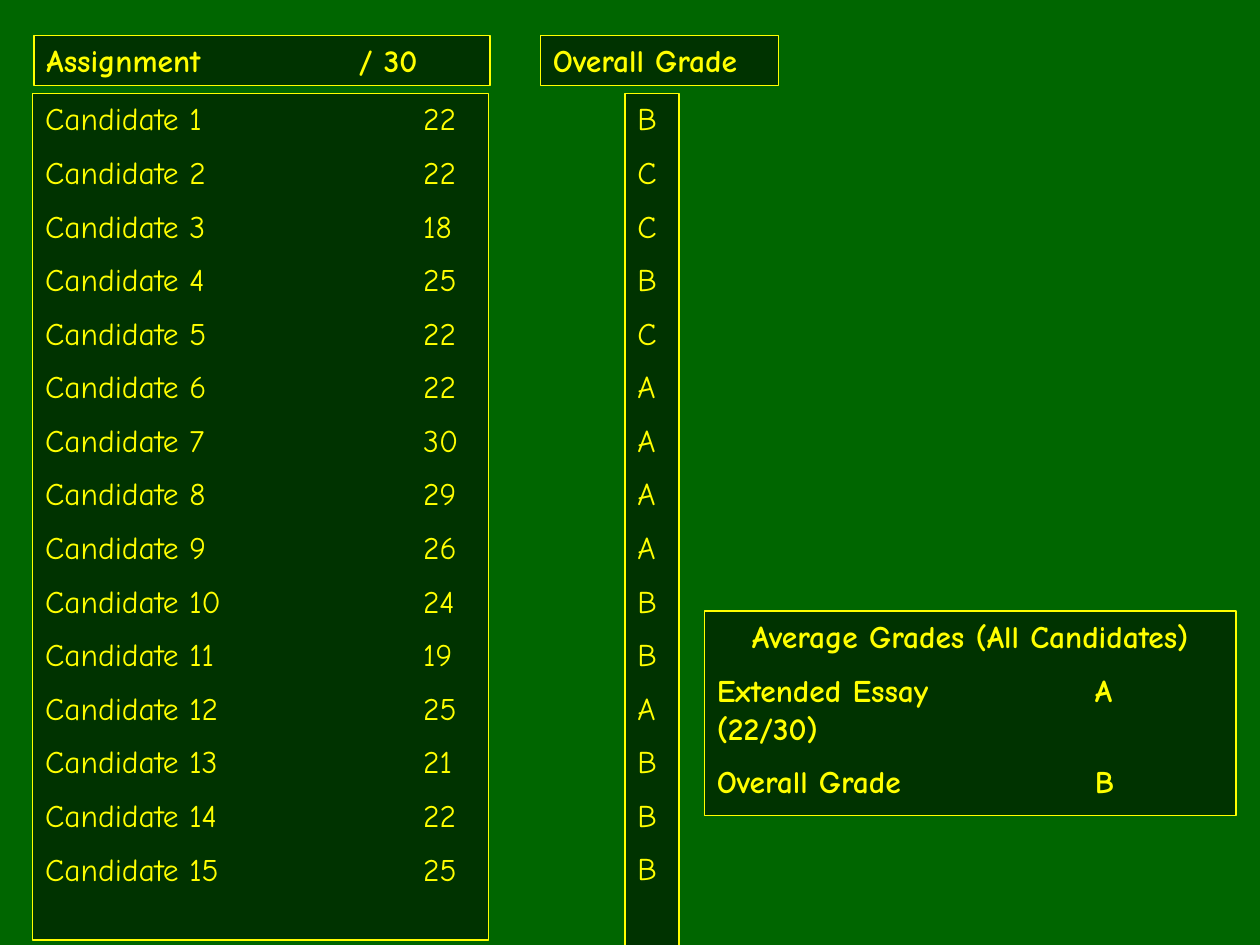
from dataclasses import dataclass

from lxml.etree import SubElement
from pptx import Presentation
from pptx.dml.color import RGBColor
from pptx.enum.text import MSO_ANCHOR, PP_ALIGN
from pptx.oxml.ns import qn
from pptx.util import Inches, Pt


@dataclass(frozen=True)
class Theme:
    """Colours, type and line sizes of the deck."""
    background: RGBColor = RGBColor(0x00, 0x66, 0x00)
    panel: RGBColor = RGBColor(0x00, 0x33, 0x00)
    accent: RGBColor = RGBColor(0xFF, 0xFF, 0x00)
    font: str = "Comic Neue"
    size: Pt = Pt(18)
    gap: Pt = Pt(9)
    border: Pt = Pt(0.75)


THEME = Theme()
VALUE_STOP = Inches(3)
HEADING_STOP = Inches(2.48)
SCORES = [22, 22, 18, 25, 22, 22, 30, 29, 26, 24, 19, 25, 21, 22, 25]
GRADES = "BCCBCAAAABBABBB"


def add_tab_stop(para, position):
    """Give a paragraph one left-aligned tab stop."""
    stops = SubElement(para._p.get_or_add_pPr(), qn("a:tabLst"))
    SubElement(stops, qn("a:tab"), pos=str(int(position)), algn="l")


def add_panel(page, box, lines, bold=False, stop=None):
    """Place a bordered panel of text lines in the given box."""
    panel = page.shapes.add_textbox(*(Inches(length) for length in box))
    panel.fill.solid()
    panel.fill.fore_color.rgb = THEME.panel
    panel.line.color.rgb = THEME.accent
    panel.line.width = THEME.border
    frame = panel.text_frame
    frame.word_wrap = True
    frame.vertical_anchor = MSO_ANCHOR.TOP
    frame.text = "\n".join(lines)
    for index, para in enumerate(frame.paragraphs):
        para.space_before = THEME.gap if index else Pt(0)
        if stop is not None:
            add_tab_stop(para, stop)
        for span in para.runs:
            span.font.name = THEME.font
            span.font.size = THEME.size
            span.font.bold = bold
            span.font.color.rgb = THEME.accent
    return panel


def add_assignment(page, left, top):
    """Place the assignment heading above the candidates' scores."""
    rows = [f"Candidate {number}\t{score}" for number, score in enumerate(SCORES, 1)]
    add_panel(page, (left, top + 0.46, 3.62, 6.72), rows, stop=VALUE_STOP)
    add_panel(page, (left + 0.01, top, 3.62, 0.4), ["Assignment\t/ 30"],
              bold=True, stop=HEADING_STOP)


def add_overall_grade(page, left, top):
    """Place the overall grade heading above the column of grades."""
    add_panel(page, (left + 0.67, top + 0.46, 0.43, 6.77), GRADES)
    add_panel(page, (left, top, 1.89, 0.4), ["Overall Grade"], bold=True)


def add_averages(page, box):
    """Place the summary of average grades with a centred heading."""
    lines = ["Average Grades (All Candidates)",
             "Extended Essay\tA\v(22/30)",
             "Overall Grade\tB"]
    panel = add_panel(page, box, lines, bold=True, stop=VALUE_STOP)
    panel.text_frame.paragraphs[0].alignment = PP_ALIGN.CENTER


def main():
    """Build and save the grades slide."""
    deck = Presentation()
    deck.slide_width, deck.slide_height = Inches(10), Inches(7.5)
    page = deck.slides.add_slide(deck.slide_layouts[6])
    page.background.fill.solid()
    page.background.fill.fore_color.rgb = THEME.background
    add_assignment(page, 0.26, 0.28)
    add_overall_grade(page, 4.29, 0.28)
    add_averages(page, (5.59, 4.85, 4.22, 1.62))
    deck.save("out.pptx")


if __name__ == "__main__":
    main()
